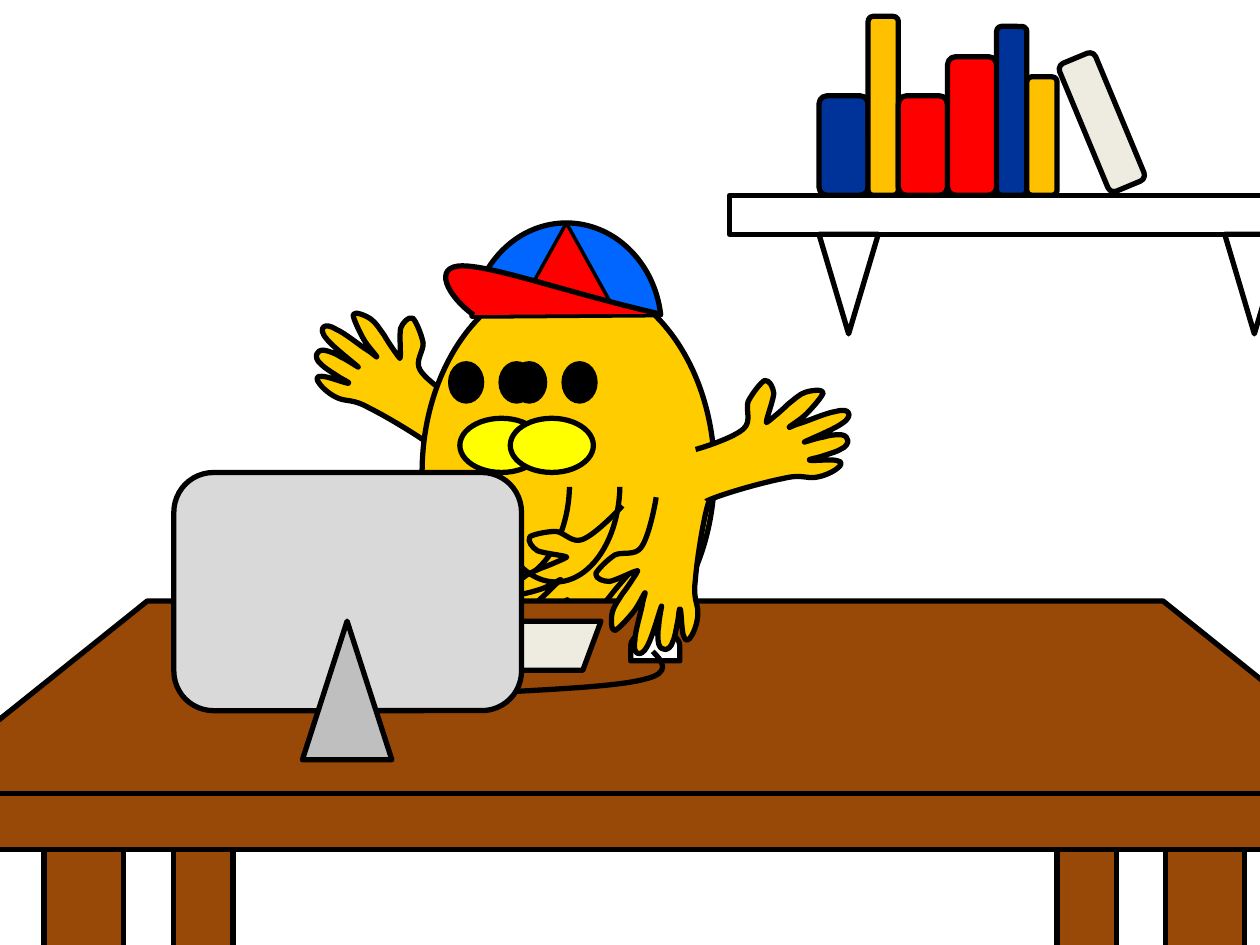
from dataclasses import dataclass
from math import cos, radians, sin

from lxml.etree import SubElement
from pptx import Presentation
from pptx.dml.color import RGBColor
from pptx.enum.shapes import MSO_SHAPE
from pptx.oxml.ns import qn
from pptx.shapes.autoshape import Shape
from pptx.shapes.shapetree import GroupShapes, SlideShapes
from pptx.util import Inches, Pt

COLORS = {
    "black": "000000", "white": "FFFFFF", "wood": "984807", "skin": "FFCC00",
    "beak": "FFFF00", "cap": "0066FF", "red": "FF0000", "cream": "EEECE1",
    "screen": "D9D9D9", "stand": "BFBFBF", "gold": "FFC000", "navy": "003399",
}
Point = tuple[float, float]
Curve = tuple[float, float, float, float, float, float]
Shapes = SlideShapes | GroupShapes


@dataclass
class Piece:
    kind: MSO_SHAPE
    left: float
    top: float
    width: float
    height: float
    fill: str | None = None
    weight: float = 3
    rotation: float = 0
    adjustments: tuple[float, ...] = ()


@dataclass
class Hand:
    left: float
    top: float
    rotation: float
    mirrored: bool = False


@dataclass
class Book:
    width: float
    height: float
    fill: str


HAND_WIDTH, HAND_HEIGHT = 0.89, 1.33
HAND_TILT = 18.8  # angle at which the hand outline below is drawn
HAND_CENTER = (5.205, 4.535)
HAND_START = (5.21, 3.95)
HAND_CURVES: list[Curve] = [
    (5.2, 4.02, 5.15, 4.27, 5.09, 4.35), (5.04, 4.42, 4.94, 4.38, 4.88, 4.41),
    (4.82, 4.45, 4.74, 4.53, 4.73, 4.56), (4.73, 4.6, 4.79, 4.62, 4.84, 4.62),
    (4.89, 4.61, 5.01, 4.55, 5.04, 4.54), (5.08, 4.53, 5.06, 4.53, 5.05, 4.56),
    (5.03, 4.59, 4.98, 4.67, 4.94, 4.72), (4.91, 4.77, 4.87, 4.82, 4.86, 4.87),
    (4.85, 4.92, 4.85, 5.01, 4.88, 5.01), (4.91, 5, 4.99, 4.91, 5.03, 4.86),
    (5.07, 4.81, 5.11, 4.72, 5.12, 4.71), (5.13, 4.7, 5.11, 4.74, 5.1, 4.8),
    (5.09, 4.86, 5.04, 5.02, 5.04, 5.09), (5.03, 5.15, 5.04, 5.18, 5.06, 5.19),
    (5.08, 5.2, 5.11, 5.19, 5.14, 5.13), (5.18, 5.06, 5.24, 4.84, 5.25, 4.82),
    (5.26, 4.79, 5.23, 4.92, 5.23, 4.97), (5.22, 5.02, 5.22, 5.08, 5.23, 5.12),
    (5.24, 5.15, 5.26, 5.16, 5.28, 5.16), (5.3, 5.16, 5.33, 5.14, 5.34, 5.1),
    (5.36, 5.06, 5.37, 4.98, 5.38, 4.94), (5.39, 4.89, 5.39, 4.82, 5.4, 4.84),
    (5.41, 4.86, 5.41, 5.03, 5.43, 5.06), (5.44, 5.1, 5.47, 5.09, 5.49, 5.05),
    (5.51, 5.02, 5.54, 4.94, 5.54, 4.87), (5.54, 4.79, 5.5, 4.76, 5.52, 4.61),
    (5.53, 4.46, 5.59, 4.08, 5.63, 3.98),
]
BRIM_START = (3.76, 2.5)
BRIM_CURVES: list[Curve] = [(3.55, 2.35, 3.43, 2.11, 3.67, 2.11),
                            (3.92, 2.11, 4.53, 2.33, 5.23, 2.49)]
CABLE_START = (5.18, 5.17)
CABLE_CURVES: list[Curve] = [(5.26, 5.25, 5.33, 5.34, 5.12, 5.39),
                             (4.9, 5.45, 4.39, 5.47, 3.88, 5.5)]

LEGS = [(0.35, 0.63), (9.25, 0.63), (8.39, 0.47), (1.38, 0.47)]
LEFT_ARM = Hand(2.67, 2.31, 130.9)
TYPING_HAND = Hand(4.17, 3.84, 52)
RIGHT_ARM = Hand(5.66, 2.83, 244.5, mirrored=True)
MOUSE_HAND = Hand(4.76, 3.87, HAND_TILT)
SHELF_TOP, BOOKS_LEFT = 1.55, 6.5
BOOKS = [
    Book(0.39, 0.79, "navy"), Book(0.24, 1.42, "gold"), Book(0.39, 0.79, "red"),
    Book(0.39, 1.1, "red"), Book(0.24, 1.34, "navy"), Book(0.24, 0.94, "gold"),
]


def arc_angles(start: float, end: float) -> tuple[float, float]:
    """Turn degrees into the adjustment values of an arc or chord."""
    return start * 0.6, end * 0.6


def paint(shape: Shape, fill: str | None, weight: float = 3) -> None:
    shape.shadow.inherit = False
    if fill is None:
        shape.fill.background()
    else:
        shape.fill.solid()
        shape.fill.fore_color.rgb = RGBColor.from_string(COLORS[fill])
    shape.line.color.rgb = RGBColor.from_string(COLORS["black"])
    shape.line.width = Pt(weight)


def draw(shapes: Shapes, *pieces: Piece) -> None:
    for piece in pieces:
        shape = shapes.add_shape(piece.kind, Inches(piece.left), Inches(piece.top),
                                 Inches(piece.width), Inches(piece.height))
        for index, value in enumerate(piece.adjustments):
            shape.adjustments[index] = value
        shape.rotation = piece.rotation
        paint(shape, piece.fill, piece.weight)


def control_points(start: Point, curves: list[Curve]) -> list[Point]:
    return [start] + [curve[i:i + 2] for curve in curves for i in (0, 2, 4)]


def draw_curves(shapes: Shapes, points: list[Point], fill: str | None) -> Shape:
    """Draw an open outline, each three points after the first being one cubic curve."""
    corners = [(Inches(x), Inches(y)) for x, y in points]
    builder = shapes.build_freeform(*corners[0])
    builder.add_line_segments(corners[1:], close=False)
    shape = builder.convert_to_shape()
    outline = next(shape._element.iter(qn("a:path")))
    lines = outline.findall(qn("a:lnTo"))
    for first in range(0, len(lines), 3):
        curve = SubElement(outline, qn("a:cubicBezTo"))
        for line in lines[first:first + 3]:
            curve.append(line[0])
            outline.remove(line)
    paint(shape, fill)
    return shape


def draw_hand(shapes: Shapes, hand: Hand) -> None:
    """Set the hand outline upright, then mirror, place and rotate it."""
    center_x, center_y = HAND_CENTER
    cosine, sine = cos(radians(HAND_TILT)), sin(radians(HAND_TILT))
    side = -1 if hand.mirrored else 1
    points = []
    for x, y in control_points(HAND_START, HAND_CURVES):
        dx, dy = x - center_x, y - center_y
        points.append((center_x + side * (dx * cosine + dy * sine),
                       center_y + dy * cosine - dx * sine))
    shape = draw_curves(shapes, points, "skin")
    shape.left, shape.top = Inches(hand.left), Inches(hand.top)
    shape.width, shape.height = Inches(HAND_WIDTH), Inches(HAND_HEIGHT)
    shape.rotation = hand.rotation


def draw_face(shapes: Shapes, left: float) -> None:
    face = shapes.add_group_shape().shapes
    for eye_left in (left + 0.57, left + 0.07):
        draw(face, Piece(MSO_SHAPE.OVAL, eye_left, 2.88, 0.26, 0.31, "black", 2))
    draw(face,
         Piece(MSO_SHAPE.OVAL, left + 0.15, 3.32, 0.66, 0.43, "beak"),
         Piece(MSO_SHAPE.ARC, left, 3.06, 1.02, 1.56, adjustments=arc_angles(2.78, 173.78)))


def draw_figure(shapes: Shapes) -> None:
    draw_hand(shapes, LEFT_ARM)
    draw(shapes, Piece(MSO_SHAPE.OVAL, 3.35, 2.2, 2.32, 3.1, "skin"))
    draw_face(shapes, 3.5)
    cap = shapes.add_group_shape().shapes
    draw(cap,
         Piece(MSO_SHAPE.CHORD, 3.74, 1.77, 1.51, 1.67, "cap",
               adjustments=arc_angles(187.22, 351.92)),
         Piece(MSO_SHAPE.ISOSCELES_TRIANGLE, 4.09, 1.77, 0.81, 0.73, "red", 2))
    draw_curves(cap, control_points(BRIM_START, BRIM_CURVES), "red")
    draw_hand(shapes, TYPING_HAND)
    draw_face(shapes, 3.9)
    draw_hand(shapes, RIGHT_ARM)


def draw_desk(shapes: Shapes) -> None:
    draw(shapes.add_group_shape().shapes,
         Piece(MSO_SHAPE.TRAPEZOID, -0.74, 4.77, 11.88, 1.53, "wood", adjustments=(1.248,)),
         Piece(MSO_SHAPE.RECTANGLE, -0.75, 6.3, 11.77, 0.44, "wood"))
    draw(shapes,
         Piece(MSO_SHAPE.PARALLELOGRAM, 2.72, 4.93, 2.05, 0.39, "cream", adjustments=(0.371,)),
         Piece(MSO_SHAPE.FLOWCHART_DELAY, 5.08, 4.93, 0.24, 0.39, "white", rotation=270))
    draw_curves(shapes, control_points(CABLE_START, CABLE_CURVES), None)
    draw(shapes.add_group_shape().shapes,
         Piece(MSO_SHAPE.ROUNDED_RECTANGLE, 1.38, 3.75, 2.76, 1.89, "screen"),
         Piece(MSO_SHAPE.ISOSCELES_TRIANGLE, 2.4, 4.93, 0.71, 1.1, "stand"))
    draw_hand(shapes, MOUSE_HAND)


def draw_shelf(shapes: Shapes) -> None:
    draw(shapes, Piece(MSO_SHAPE.RECTANGLE, 5.79, SHELF_TOP, 5.04, 0.31))
    for left in (6.5, 9.72):
        draw(shapes, Piece(MSO_SHAPE.ISOSCELES_TRIANGLE, left, 1.86, 0.47, 0.79, rotation=180))
    draw(shapes, Piece(MSO_SHAPE.ROUNDED_RECTANGLE, 8.59, 0.42, 0.31, 1.1, "cream",
                       rotation=337.4))
    left = BOOKS_LEFT
    for book in BOOKS:
        draw(shapes, Piece(MSO_SHAPE.ROUNDED_RECTANGLE, left, SHELF_TOP - book.height,
                           book.width, book.height, book.fill))
        left += book.width


def main() -> None:
    deck = Presentation()
    deck.slide_width, deck.slide_height = Inches(10), Inches(7.5)
    page = deck.slides.add_slide(deck.slide_layouts[6])
    for left, width in LEGS:
        draw(page.shapes, Piece(MSO_SHAPE.RECTANGLE, left, 6.66, width, 1.02, "wood"))
    draw_figure(page.shapes)
    draw_desk(page.shapes)
    draw_shelf(page.shapes.add_group_shape().shapes)
    deck.save("out.pptx")


if __name__ == "__main__":
    main()
